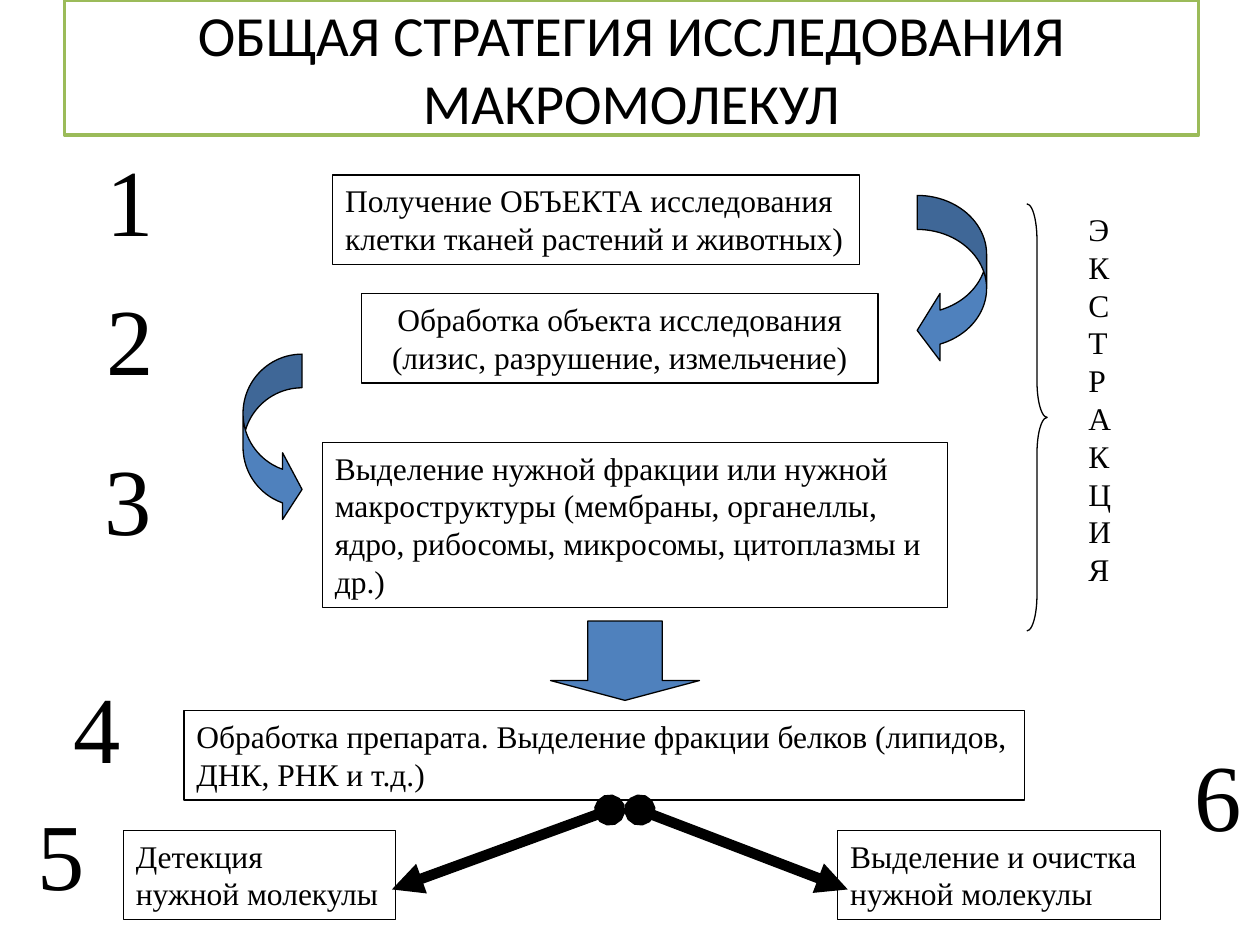
import dataclasses

import lxml.etree
import pptx
import pptx.dml.color
import pptx.enum.shapes
import pptx.enum.text
import pptx.oxml.ns
import pptx.util

Cm = pptx.util.Cm
Pt = pptx.util.Pt
Shape = pptx.enum.shapes.MSO_SHAPE
Align = pptx.enum.text.PP_ALIGN
Anchor = pptx.enum.text.MSO_ANCHOR


@dataclasses.dataclass(frozen=True)
class Theme:
    ink: str = "000000"
    paper: str = "FFFFFF"
    arrow: str = "4F81BD"
    frame: str = "9BBB59"
    heading_font: str = "Calibri"
    body_font: str = "Times New Roman"
    heading_size: float = 32.4
    body_size: float = 18
    number_size: float = 54
    thin: float = 0.75
    medium: float = 2
    thick: float = 6


class SlideBuilder:
    def __init__(self, page, theme):
        self.page = page
        self.theme = theme

    def color(self, value):
        return pptx.dml.color.RGBColor.from_string(value)

    def fill_text(self, frame, text, size, font, align=Align.LEFT, wrap=True):
        frame.text = text
        frame.word_wrap = wrap
        for para in frame.paragraphs:
            para.alignment = align
            for span in para.runs:
                span.font.size = Pt(size)
                span.font.name = font
                span.font.color.rgb = self.color(self.theme.ink)

    def shape(self, kind, place, fill=None, line=None, width=None, adjustments=()):
        shape = self.page.shapes.add_shape(kind, *map(Cm, place))
        shape.shadow.inherit = False
        if fill:
            shape.fill.solid()
            shape.fill.fore_color.rgb = self.color(fill)
        else:
            shape.fill.background()
        shape.line.color.rgb = self.color(line or self.theme.ink)
        shape.line.width = Pt(width or self.theme.thin)
        for index, value in enumerate(adjustments):
            shape.adjustments[index] = value
        return shape

    def title(self, text, place):
        theme = self.theme
        box = self.shape(Shape.RECTANGLE, place, theme.paper, theme.frame, theme.medium)
        self.fill_text(box.text_frame, text, theme.heading_size, theme.heading_font, Align.CENTER)
        box.text_frame.vertical_anchor = Anchor.MIDDLE

    def step(self, text, place, align=Align.LEFT, wrap=False):
        box = self.shape(Shape.RECTANGLE, place)
        self.fill_text(box.text_frame, text, self.theme.body_size, self.theme.body_font, align, wrap)
        box.text_frame.vertical_anchor = Anchor.TOP

    def label(self, text, place, size):
        box = self.page.shapes.add_textbox(*map(Cm, place))
        self.fill_text(box.text_frame, text, size, self.theme.body_font, wrap=False)

    def branch(self, start, end):
        line = self.page.shapes.add_connector(
            pptx.enum.shapes.MSO_CONNECTOR.STRAIGHT, *map(Cm, start + end))
        line.line.color.rgb = self.color(self.theme.ink)
        line.line.width = Pt(self.theme.thick)
        qn = pptx.oxml.ns.qn
        properties = line._element.spPr
        outline = properties.find(qn("a:ln"))
        lxml.etree.SubElement(outline, qn("a:headEnd"), type="oval")
        lxml.etree.SubElement(outline, qn("a:tailEnd"), type="triangle")
        lxml.etree.SubElement(properties, qn("a:effectLst"))


def main():
    deck = pptx.Presentation()
    deck.slide_width, deck.slide_height = Cm(25.4), Cm(19.05)
    theme = Theme()
    builder = SlideBuilder(deck.slides.add_slide(deck.slide_layouts[6]), theme)

    builder.title("ОБЩАЯ СТРАТЕГИЯ ИССЛЕДОВАНИЯ МАКРОМОЛЕКУЛ", (1.3, 0, 22.86, 2.72))

    builder.step("Получение ОБЪЕКТА исследования\nклетки тканей растений и животных)",
                 (6.71, 3.53, 10.62, 1.8))
    builder.step("Обработка объекта исследования (лизис, разрушение, измельчение)",
                 (7.29, 5.92, 10.41, 1.8), Align.CENTER, wrap=True)
    builder.step("Выделение нужной фракции или нужной макроструктуры (мембраны, органеллы, "
                 "ядро, рибосомы, микросомы, цитоплазмы и др.)",
                 (6.5, 8.92, 12.6, 3.33), wrap=True)
    builder.step("Обработка препарата. Выделение фракции белков (липидов,\nДНК, РНК и т.д.)",
                 (3.71, 14.33, 16.94, 1.8))
    builder.step("Детекция\nнужной молекулы", (2.49, 16.74, 5.49, 1.8))
    builder.step("Выделение и очистка\nнужной молекулы", (16.89, 16.74, 6.5, 1.8))

    for kind, place, adjustments in (
        (Shape.CURVED_LEFT_ARROW, (18.49, 3.94, 1.4, 3.4), (0.49, 0.97, 0.33)),
        (Shape.CURVED_RIGHT_ARROW, (4.9, 7.14, 1.19, 3.4), (0.57, 1.13, 0.33)),
        (Shape.DOWN_ARROW, (11.1, 12.52, 3, 1.6), (0.5, 0.25)),
    ):
        builder.shape(kind, place, theme.arrow, adjustments=adjustments)

    builder.branch((12.29, 16.33), (7.9, 17.93))
    builder.branch((12.9, 16.33), (17.09, 17.93))

    number_places = ((1.9, 2.74), (1.9, 5.54), (1.85, 8.76),
                     (1.24, 13.36), (0.51, 15.93), (23.83, 14.73))
    for number, place in enumerate(number_places, 1):
        builder.label(str(number), place + (1.47, 2.54), theme.number_size)

    builder.shape(Shape.RIGHT_BRACE, (20.7, 4.11, 0.41, 8.61), adjustments=(1.79, 0.5))
    builder.label("\n".join("ЭКСТРАКЦИЯ"), (21.69, 4.11, 0.97, 8.64), theme.body_size)

    deck.save("out.pptx")


if __name__ == "__main__":
    main()
